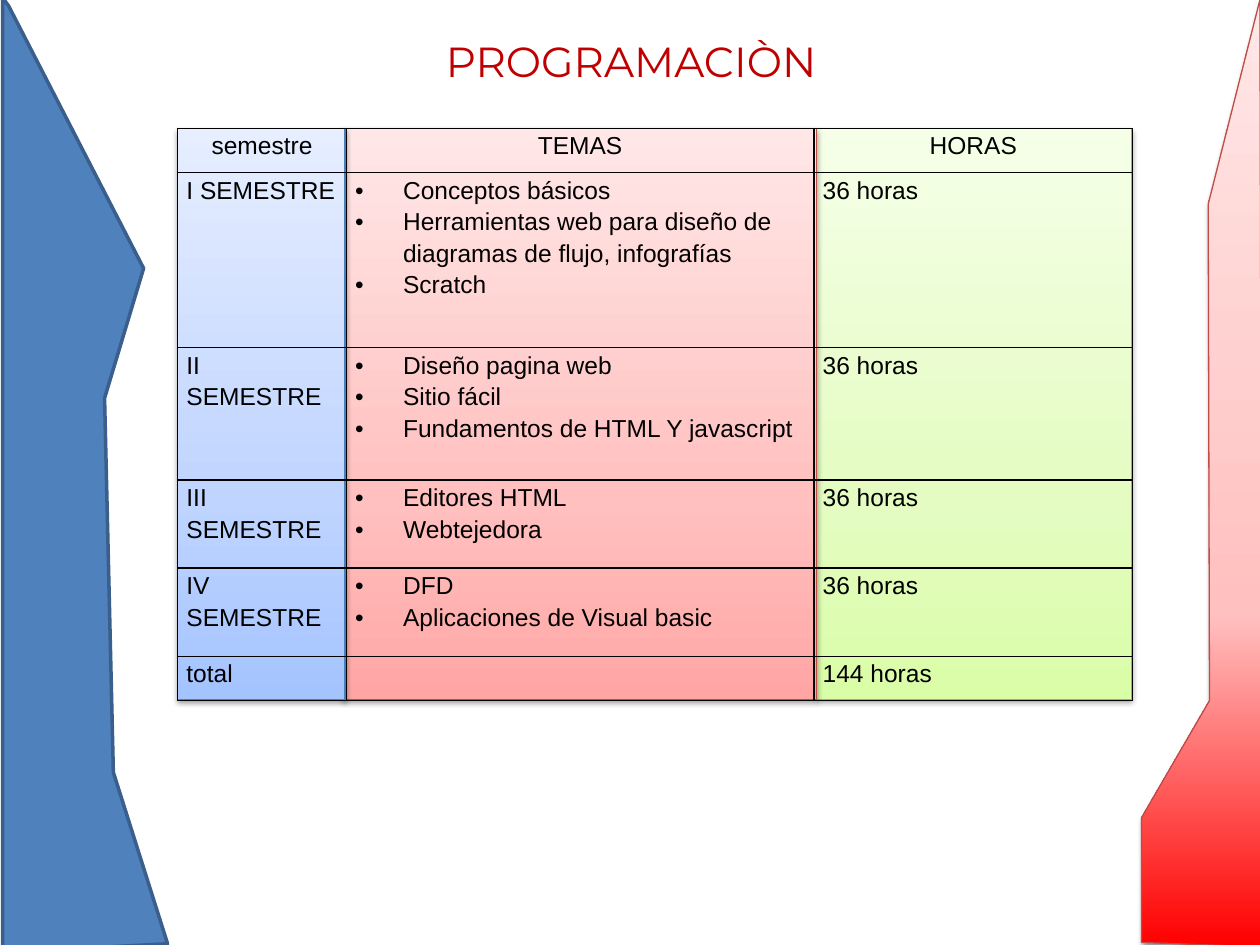
from copy import deepcopy

from lxml.etree import SubElement
from pptx import Presentation
from pptx.dml.color import RGBColor
from pptx.enum.shapes import MSO_SHAPE
from pptx.enum.text import PP_ALIGN
from pptx.oxml.ns import qn
from pptx.util import Inches, Pt

BLACK = RGBColor(0x00, 0x00, 0x00)
TITLE_RED = RGBColor(0xC0, 0x00, 0x00)
BANNER_BLUE = RGBColor(0x4F, 0x81, 0xBD)
BANNER_EDGE = RGBColor(0x3A, 0x5F, 0x8C)
RED_EDGE = RGBColor(0xBF, 0x4C, 0x48)
GREEN_EDGE = RGBColor(0x98, 0xB9, 0x55)
BLUE_EDGE = RGBColor(0x4B, 0x7E, 0xBC)
PURE_RED = RGBColor(0xFF, 0x00, 0x00)
ROSE = RGBColor(0xFF, 0xA6, 0xA5)
PINK = RGBColor(0xFF, 0xC0, 0xBF)
PALE_PINK = RGBColor(0xFF, 0xE7, 0xE7)
GREENS = (RGBColor(0xDA, 0xFD, 0xA7), RGBColor(0xE4, 0xFC, 0xC2), RGBColor(0xF5, 0xFF, 0xE7))
BLUES = (RGBColor(0xA4, 0xC4, 0xFF), RGBColor(0xBF, 0xD4, 0xFF), RGBColor(0xE6, 0xEE, 0xFF))

PANEL_TOP, PANEL_HEIGHT = 1.02, 4.53
PANELS = [
    (6.48, 2.5, GREENS, GREEN_EDGE),
    (2.73, 3.75, (ROSE, PINK, PALE_PINK), RED_EDGE),
    (1.41, 1.33, BLUES, BLUE_EDGE),
]
LEFT_BANNER = [(0.02, -0.02), (0.02, 7.56), (1.33, 7.49), (0.9, 6.13),
               (0.83, 3.16), (1.14, 2.13), (0.07, 0.05)]
RIGHT_BANNER = [(10.02, 7.51), (9.87, 7.51), (9.06, 7.48), (9.06, 6.49),
                (9.6, 5.56), (9.59, 1.62), (10, 0)]

COLUMN_WIDTHS = [1.34, 3.71, 2.53]
ROW_HEIGHTS = [0.35, 1.39, 1.05, 0.7, 0.7, 0.35]
PROGRAM = [
    ("semestre", ["TEMAS"], "HORAS"),
    ("I SEMESTRE", ["Conceptos básicos",
                    "Herramientas web para diseño de diagramas de flujo, infografías",
                    "Scratch"], "36 horas"),
    ("II SEMESTRE", ["Diseño pagina web", "Sitio fácil",
                     "Fundamentos de HTML Y javascript"], "36 horas"),
    ("III SEMESTRE", ["Editores HTML", "Webtejedora"], "36 horas"),
    ("IV SEMESTRE", ["DFD", "Aplicaciones de Visual basic"], "36 horas"),
    ("total", [], "144 horas"),
]


def set_outline(shape, color, width):
    shape.line.color.rgb = color
    shape.line.width = Pt(width)
    shape.shadow.inherit = False


def add_shadow(shape):
    effects = shape._element.spPr.find(qn("a:effectLst"))
    shadow = SubElement(effects, qn("a:outerShdw"), blurRad=str(Pt(3.1)),
                        dist=str(Pt(1.6)), dir="5400000", rotWithShape="0")
    tint = SubElement(shadow, qn("a:srgbClr"), val=str(BLACK))
    SubElement(tint, qn("a:alpha"), val="38000")


def fill_upward(shape, colors):
    shape.fill.gradient()
    shape.fill.gradient_angle = 90
    stop_list = shape._element.spPr.find(qn("a:gradFill")).find(qn("a:gsLst"))
    stop_list.append(deepcopy(stop_list[0]))
    for stop, position, color in zip(shape.fill.gradient_stops, (0, 0.35, 1), colors):
        stop.position = position
        stop.color.rgb = color


def add_panel(slide, left, width, colors, edge):
    panel = slide.shapes.add_shape(MSO_SHAPE.RECTANGLE, Inches(left), Inches(PANEL_TOP),
                                   Inches(width), Inches(PANEL_HEIGHT))
    fill_upward(panel, colors)
    set_outline(panel, edge, 0.75)
    add_shadow(panel)


def add_banner(slide, points, edge, width):
    start, *corners = [(Inches(x), Inches(y)) for x, y in points]
    builder = slide.shapes.build_freeform(*start)
    builder.add_line_segments(corners, close=True)
    banner = builder.convert_to_shape()
    set_outline(banner, edge, width)
    return banner


def write_run(paragraph, text, font, size, color):
    run = paragraph.add_run()
    run.text = text
    for name, value in {"name": font, "size": Pt(size), "bold": False}.items():
        setattr(run.font, name, value)
    run.font.color.rgb = color


def add_title(slide, text):
    title = slide.shapes.add_textbox(Inches(3.44), Inches(0.23), Inches(3.67), Inches(0.5))
    title.text_frame.word_wrap = True
    write_run(title.text_frame.paragraphs[0], text, "Montserrat", 24, TITLE_RED)


def add_bullet(paragraph):
    properties = paragraph._p.get_or_add_pPr()
    properties.set("marL", str(Inches(0.38)))
    properties.set("indent", str(-Inches(0.38)))
    SubElement(properties, qn("a:buFont"), typeface="Arial")
    SubElement(properties, qn("a:buChar"), char="•")


def format_cell(cell):
    margins = {"margin_left": 0.07, "margin_right": 0.07, "margin_top": 0, "margin_bottom": 0}
    for name, value in margins.items():
        setattr(cell, name, Inches(value))
    properties = cell._tc.get_or_add_tcPr()
    for side in ("lnL", "lnR", "lnT", "lnB"):
        border = SubElement(properties, qn(f"a:{side}"), w=str(Pt(1)))
        SubElement(SubElement(border, qn("a:solidFill")), qn("a:srgbClr"), val=str(BLACK))
    cell.fill.background()


def write_cell(cell, lines, centered, bulleted):
    for index, line in enumerate(lines):
        frame = cell.text_frame
        paragraph = frame.add_paragraph() if index else frame.paragraphs[0]
        paragraph.line_spacing = 1.15
        paragraph.alignment = PP_ALIGN.CENTER if centered else PP_ALIGN.LEFT
        if bulleted:
            add_bullet(paragraph)
        write_run(paragraph, line, "Arial", 14, BLACK)


def add_program(slide):
    table = slide.shapes.add_table(len(PROGRAM), len(COLUMN_WIDTHS), Inches(1.41),
                                   Inches(PANEL_TOP), Inches(sum(COLUMN_WIDTHS)),
                                   Inches(sum(ROW_HEIGHTS))).table
    table.first_row = table.horz_banding = False
    for column, width in zip(table.columns, COLUMN_WIDTHS):
        column.width = Inches(width)
    for row, height in zip(table.rows, ROW_HEIGHTS):
        row.height = Inches(height)
    for r, (semester, topics, hours) in enumerate(PROGRAM):
        for c, lines in enumerate(([semester], topics, [hours])):
            cell = table.cell(r, c)
            format_cell(cell)
            write_cell(cell, lines, centered=r == 0, bulleted=r > 0 and c == 1)


def main():
    deck = Presentation()
    deck.slide_width, deck.slide_height = Inches(10), Inches(7.5)
    slide = deck.slides.add_slide(deck.slide_layouts[6])
    for panel in PANELS:
        add_panel(slide, *panel)
    left_banner = add_banner(slide, LEFT_BANNER, BANNER_EDGE, 2)
    left_banner.fill.solid()
    left_banner.fill.fore_color.rgb = BANNER_BLUE
    right_banner = add_banner(slide, RIGHT_BANNER, RED_EDGE, 0.75)
    fill_upward(right_banner, (PURE_RED, PINK, PALE_PINK))
    add_shadow(right_banner)
    add_title(slide, "PROGRAMACIÒN")
    add_program(slide)
    deck.save("out.pptx")


if __name__ == "__main__":
    main()
